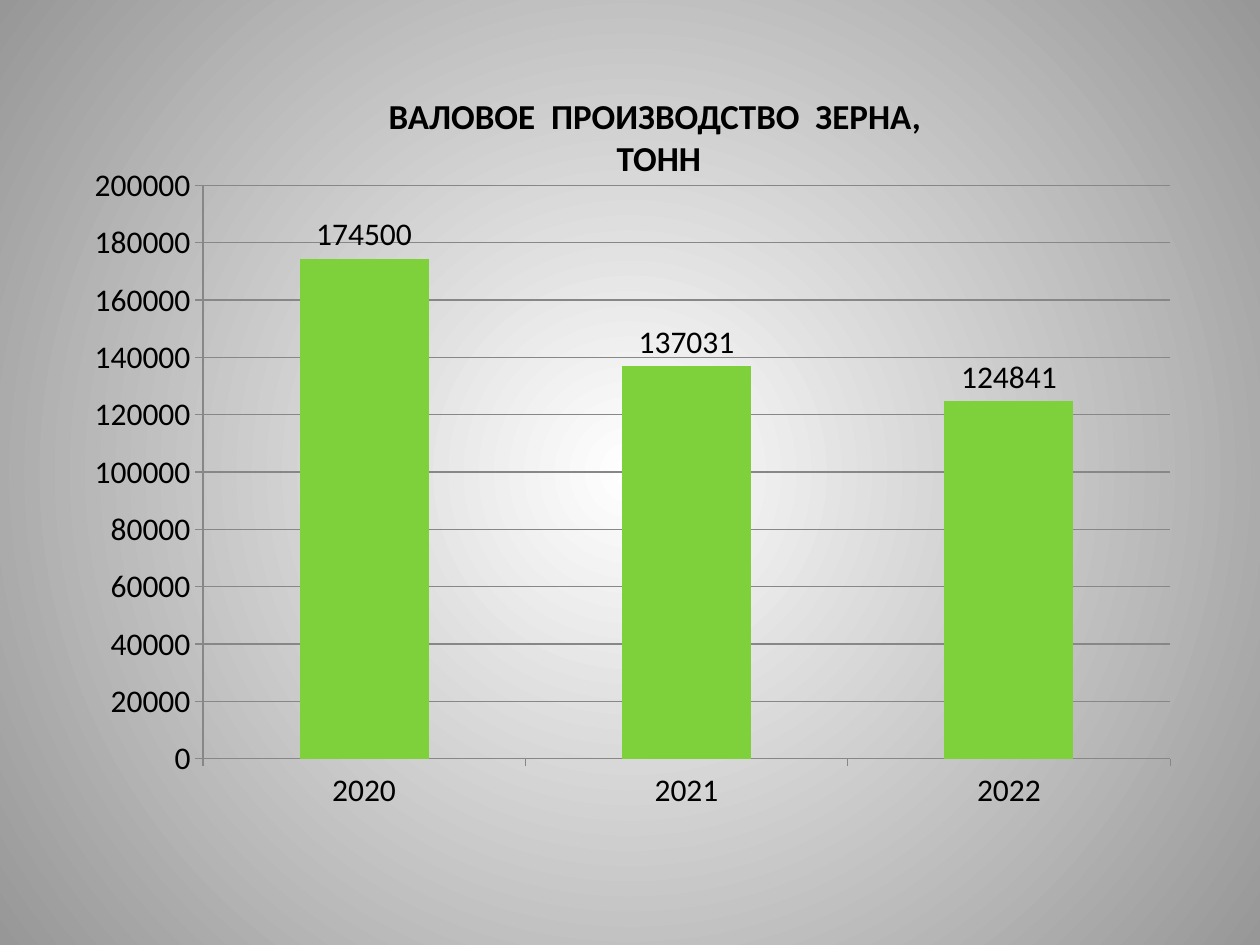
from lxml import etree
from pptx import Presentation
from pptx.chart.data import CategoryChartData
from pptx.dml.color import RGBColor
from pptx.enum import chart as ch, text
from pptx.oxml import parse_xml
from pptx.oxml.ns import nsdecls, qn
from pptx.util import Inches, Pt

BLACK = RGBColor(0x00, 0x00, 0x00)
WHITE = RGBColor(0xFF, 0xFF, 0xFF)
EDGE_GRAY = RGBColor(0x97, 0x97, 0x97)
LINE_GRAY = RGBColor(0x87, 0x87, 0x87)
GREEN = RGBColor(0x7F, 0xD1, 0x3B)
FONT = "Calibri"


def add_text(slide, lines, left, top, width, height, size=20, bold=False,
             color=BLACK, align=text.PP_ALIGN.CENTER):
    box = slide.shapes.add_textbox(Inches(left), Inches(top), Inches(width), Inches(height))
    frame = box.text_frame
    frame.word_wrap = True
    frame.text = "\n".join(lines)
    for paragraph in frame.paragraphs:
        paragraph.alignment = align
        font = paragraph.runs[0].font
        font.name, font.size, font.bold = FONT, Pt(size), bold
        font.color.rgb = color


presentation = Presentation()
presentation.slide_width, presentation.slide_height = Inches(10), Inches(7.5)
slide = presentation.slides.add_slide(presentation.slide_layouts[6])

# Radial background, white in the centre
fill = slide.background.fill
fill.gradient()
for stop, color in zip(fill.gradient_stops, (WHITE, EDGE_GRAY)):
    stop.color.rgb = color
gradient = next(slide.element.iter(qn("a:gradFill")))
gradient.replace(gradient.find(qn("a:lin")), parse_xml(
    f'<a:path {nsdecls("a")} path="circle">'
    '<a:fillToRect l="50000" t="50000" r="50000" b="50000"/></a:path>'))

add_text(slide, ["ВАЛОВОЕ  ПРОИЗВОДСТВО  ЗЕРНА, ", "ТОНН"], 1.56, 0.7, 7.34, 0.77, bold=True)

# Grain production by year
data = CategoryChartData()
data.categories = ["2020", "2021", "2022"]
data.add_series("Series 1", (174500, 137031, 124841))
chart = slide.shapes.add_chart(ch.XL_CHART_TYPE.COLUMN_CLUSTERED, Inches(0.47), Inches(1.09),
                               Inches(8.98), Inches(5.63), data).chart
chart.has_legend = False
chart.has_title = False
chart.font.name, chart.font.size = FONT, Pt(18)
chart.font.color.rgb = BLACK

plot = chart.plots[0]
plot.gap_width = 150
plot.vary_by_categories = False
series = plot.series[0]
series.format.fill.solid()
series.format.fill.fore_color.rgb = GREEN
labels = series.data_labels
labels.show_value = True
labels.position = ch.XL_LABEL_POSITION.OUTSIDE_END

value_axis = chart.value_axis
value_axis.minimum_scale, value_axis.maximum_scale = 0, 200000
value_axis.major_unit = 20000
value_axis.has_major_gridlines = True
for axis in (chart.category_axis, value_axis):
    axis.major_tick_mark = ch.XL_TICK_MARK.OUTSIDE
for line in (chart.category_axis.format.line, value_axis.format.line,
             value_axis.major_gridlines.format.line):
    line.color.rgb = LINE_GRAY
    line.width = Pt(0.75)

# Fixed inner plot area, as fractions of the chart
plot_area = next(chart.element.iter(qn("c:plotArea")))
for old_layout in plot_area.findall(qn("c:layout")):
    plot_area.remove(old_layout)
layout = etree.Element(qn("c:layout"))
manual = etree.SubElement(layout, qn("c:manualLayout"))
for tag, value in (("layoutTarget", "inner"), ("xMode", "edge"), ("yMode", "edge"),
                   ("x", 0.127), ("y", 0.068), ("w", 0.855), ("h", 0.808)):
    etree.SubElement(manual, qn(f"c:{tag}")).set("val", str(value))
plot_area.insert(0, layout)

presentation.save("out.pptx")
